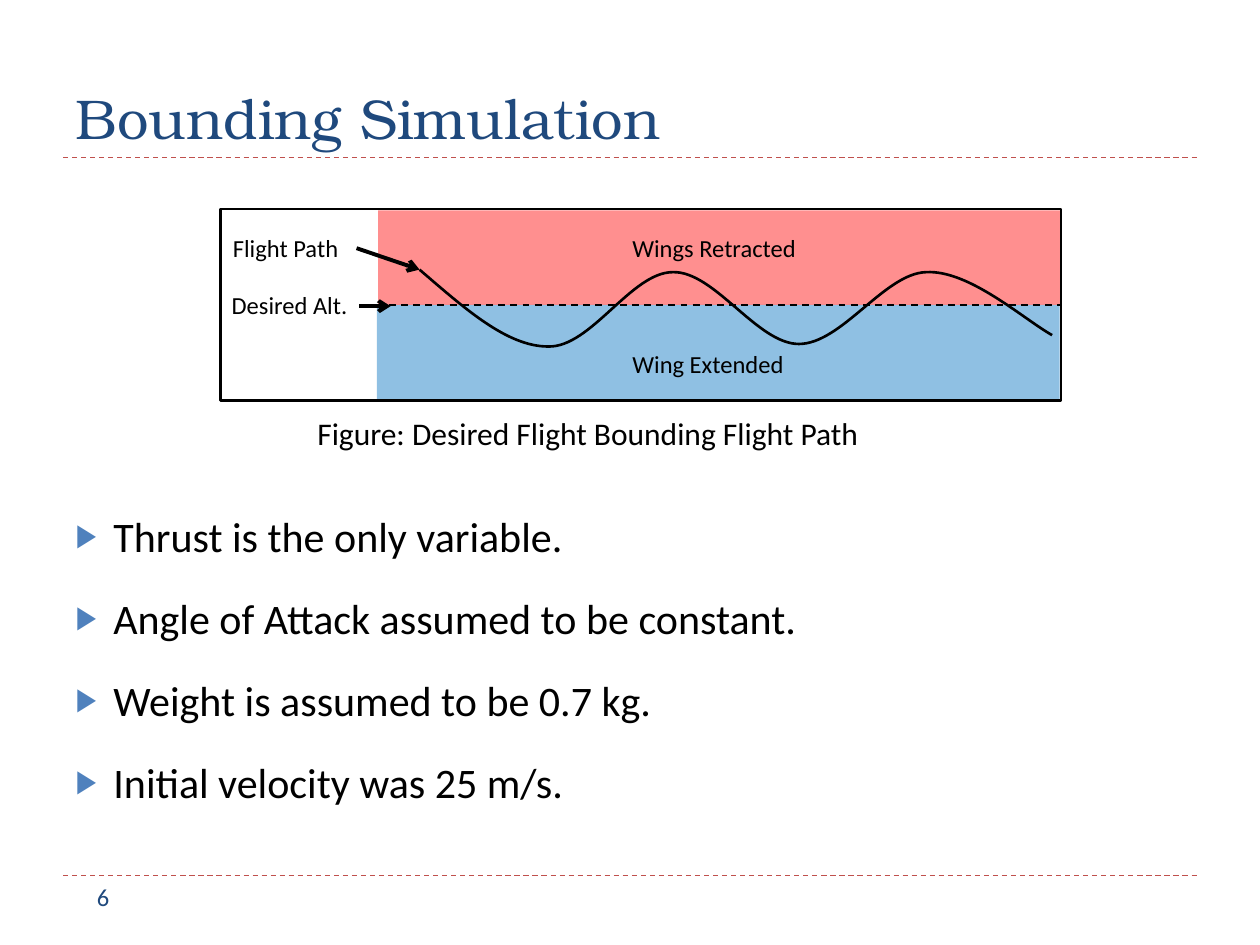
import pptx
import pptx.util
import pptx.dml.color
import pptx.enum.dml
import pptx.enum.shapes
import pptx.enum.text
import pptx.oxml
import pptx.oxml.ns

BLACK = pptx.dml.color.RGBColor(0x00, 0x00, 0x00)
NAVY = pptx.dml.color.RGBColor(0x1F, 0x49, 0x7D)
BULLET_BLUE = pptx.dml.color.RGBColor(0x4F, 0x81, 0xBD)
RULE_RED = pptx.dml.color.RGBColor(0xC0, 0x50, 0x4D)
RETRACTED_RED = pptx.dml.color.RGBColor(0xFF, 0x00, 0x00)
EXTENDED_BLUE = pptx.dml.color.RGBColor(0x00, 0x70, 0xC0)
RECTANGLE = pptx.enum.shapes.MSO_SHAPE.RECTANGLE
qn = pptx.oxml.ns.qn

presentation = pptx.Presentation()
presentation.slide_width = pptx.util.Inches(10)
presentation.slide_height = pptx.util.Inches(7.5)
slide = presentation.slides.add_slide(presentation.slide_layouts[1])
shapes = slide.shapes


def place(*steps):
    """Turn grid steps, each a tenth of the slide's width, into lengths."""
    return [round(step * presentation.slide_width / 10) for step in steps]


def add_line(start_x, start_y, end_x, end_y, color, weight, dashed=False):
    line = shapes.add_connector(pptx.enum.shapes.MSO_CONNECTOR.STRAIGHT,
                                *place(start_x, start_y, end_x, end_y))
    line.line.color.rgb = color
    line.line.width = pptx.util.Pt(weight)
    if dashed:
        line.line.dash_style = pptx.enum.dml.MSO_LINE.DASH
    properties = line._element.spPr
    properties.append(properties.makeelement(qn("a:effectLst"), {}))
    return line


# Rules under the title and above the footer
for rule_y in (1.25, 6.95):
    add_line(0.5, rule_y, 9.5, rule_y, RULE_RED, 0.75, dashed=True)

# Title
title = shapes.title
title.left, title.top, title.width, title.height = place(0.5, 0.17, 9, 1.08)
title.text_frame.auto_size = pptx.enum.text.MSO_AUTO_SIZE.NONE
title.text_frame.vertical_anchor = pptx.enum.text.MSO_ANCHOR.BOTTOM
paragraph = title.text_frame.paragraphs[0]
paragraph.alignment = pptx.enum.text.PP_ALIGN.LEFT
run = paragraph.add_run()
run.text = "Bounding Simulation"
run.font.name = "TeX Gyre Bonum"
run.font.size = pptx.util.Pt(32)
run.font.color.rgb = NAVY

# Assumptions
body = slide.placeholders[1]
body.left, body.top, body.width, body.height = place(0.5, 4, 9, 2.73)
body.text_frame.auto_size = pptx.enum.text.MSO_AUTO_SIZE.NONE
assumptions = [
    "Thrust is the only variable.",
    "Angle of Attack assumed to be constant.",
    "Weight is assumed to be 0.7 kg.",
    "Initial velocity was 25 m/s.",
]
indent = pptx.util.Inches(0.3)
for index, assumption in enumerate(assumptions):
    frame = body.text_frame
    paragraph = frame.add_paragraph() if index else frame.paragraphs[0]
    properties = paragraph._p.get_or_add_pPr()
    properties.set("marL", str(indent))
    properties.set("indent", str(-indent))
    for bullet in (f'<a:buClr %s><a:srgbClr val="{BULLET_BLUE}"/></a:buClr>',
                   '<a:buSzPct %s val="76000"/>', '<a:buChar %s char="▶"/>'):
        properties.append(pptx.oxml.parse_xml(bullet % pptx.oxml.ns.nsdecls("a")))
    paragraph.space_before = pptx.util.Pt(18 if index else 0)
    run = paragraph.add_run()
    run.text = assumption
    run.font.name = "Calibri"
    run.font.size = pptx.util.Pt(24)
    run.font.color.rgb = BLACK

# Zones above and below the desired altitude
altitude = 2.42
zone_height = 0.75
for left, top, color in ((3, altitude - zone_height, RETRACTED_RED),
                         (2.99, altitude, EXTENDED_BLUE)):
    zone = shapes.add_shape(RECTANGLE, *place(left, top, 5.42, zone_height))
    zone.shadow.inherit = False
    zone.line.fill.background()
    zone.fill.solid()
    zone.fill.fore_color.rgb = color
    zone_color = zone._element.spPr.find(qn("a:solidFill"))[0]
    zone_color.append(zone_color.makeelement(qn("a:alpha"), {"val": "44000"}))

# Flight path: a start, then two control points and an end for each curve
flight_points = [
    (3.33, 2.14),
    (3.68, 2.44), (4.02, 2.75), (4.35, 2.75),
    (4.69, 2.76), (5.01, 2.16), (5.34, 2.16),
    (5.67, 2.15), (6.01, 2.73), (6.34, 2.73),
    (6.68, 2.73), (7.02, 2.17), (7.35, 2.16),
    (7.69, 2.14), (8.12, 2.53), (8.35, 2.66),
]
start, *rest = [place(*point) for point in flight_points]
builder = shapes.build_freeform(*start)
builder.add_line_segments(rest, close=False)
flight_path = builder.convert_to_shape()
flight_path.shadow.inherit = False
flight_path.fill.background()
flight_path.line.color.rgb = BLACK
flight_path.line.width = pptx.util.Pt(1.5)
segments = list(flight_path._element.iter(qn("a:lnTo")))
outline = segments[0].getparent()
for first in range(0, len(segments), 3):
    curve = outline.makeelement(qn("a:cubicBezTo"), {})
    outline.append(curve)
    for segment in segments[first:first + 3]:
        curve.append(segment[0])
        outline.remove(segment)

# Frame around the figure
figure_frame = shapes.add_shape(RECTANGLE, *place(1.75, 1.66, 6.67, 1.52))
figure_frame.shadow.inherit = False
figure_frame.fill.background()
figure_frame.line.color.rgb = BLACK
figure_frame.line.width = pptx.util.Pt(1.5)

# Labels, caption and slide number
labels = {}
for text, left, top, width, height, size, color in (
        ("Flight Path", 1.75, 1.8, 1.17, 0.34, 14, BLACK),
        ("Desired Alt.", 1.74, 2.25, 1.25, 0.34, 14, BLACK),
        ("Wings Retracted", 4.92, 1.8, 1.64, 0.34, 14, BLACK),
        ("Wing Extended", 4.92, 2.72, 1.52, 0.34, 14, BLACK),
        ("Figure: Desired Flight Bounding Flight Path",
         2.42, 3.24, 5.08, 0.4, 18, BLACK),
        ("6", 0.67, 6.95, 2.17, 0.4, 14, NAVY)):
    label = shapes.add_textbox(*place(left, top, width, height))
    label.text_frame.word_wrap = True
    run = label.text_frame.paragraphs[0].add_run()
    run.text = text
    run.font.name = "Calibri"
    run.font.size = pptx.util.Pt(size)
    run.font.color.rgb = color
    labels[text] = label

# Desired altitude, from its label to the far side of the frame
altitude_line = add_line(2.99, altitude, 8.42, altitude, BLACK, 1, dashed=True)
altitude_line.begin_connect(labels["Desired Alt."], 3)
altitude_line.end_connect(figure_frame, 3)

# Arrows from the labels to the flight path and the altitude line
for ends in ((2.83, 1.97, 3.33, 2.14), (2.85, 2.43, 3.1, 2.43)):
    arrow = add_line(*ends, BLACK, 2.25)
    arrow_line = arrow.line._get_or_add_ln()
    arrow_line.append(arrow_line.makeelement(qn("a:tailEnd"), {"type": "arrow"}))

presentation.save("out.pptx")
